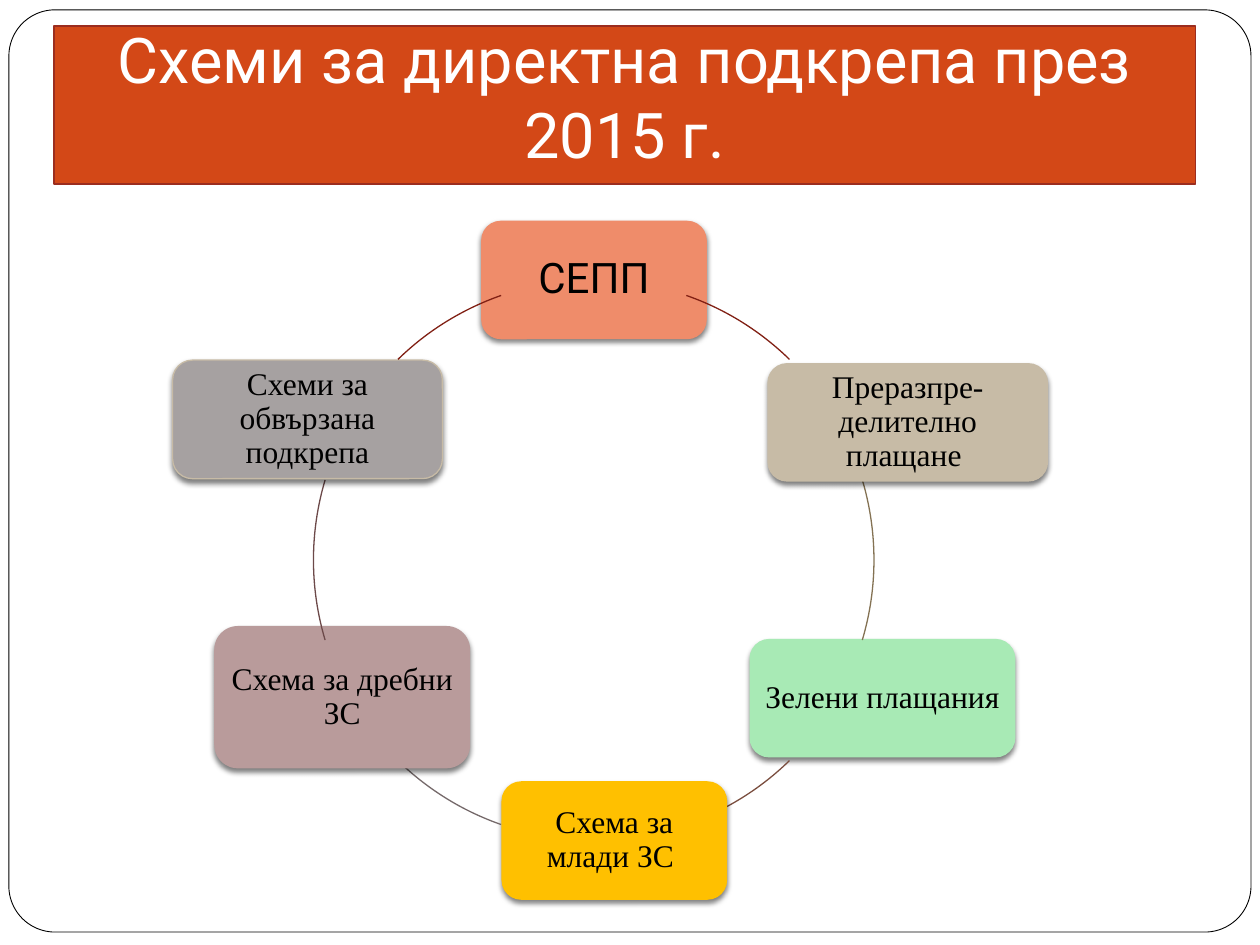
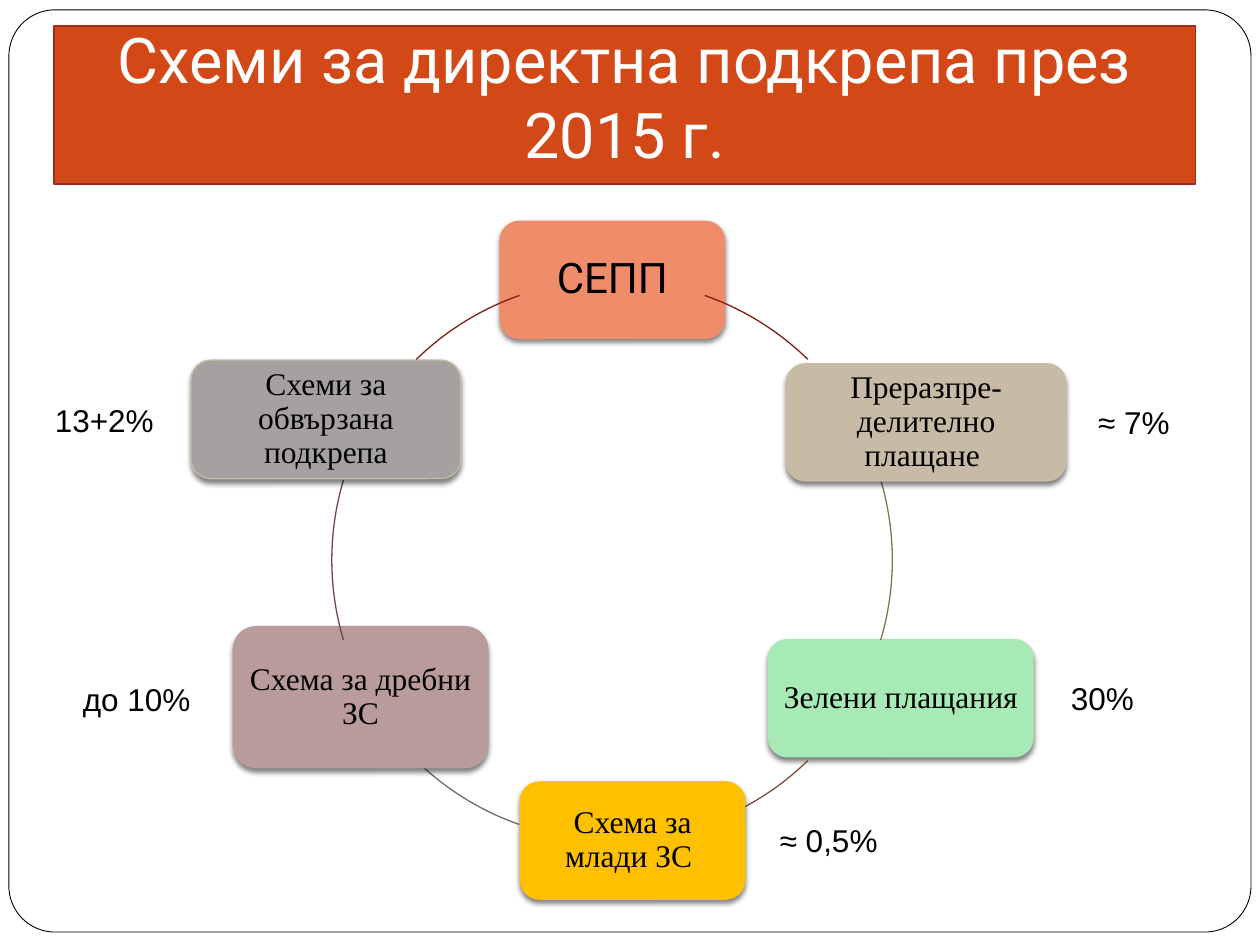
from dataclasses import dataclass
from typing import Any

from lxml import etree
from pptx import Presentation
from pptx import util as u
from pptx.dml.color import RGBColor
from pptx.enum import shapes, text
from pptx.oxml.ns import qn

BLACK = "000000"
WHITE = "FFFFFF"
BANNER_FILL = "D34817"
BANNER_LINE = "9B2D1F"
TITLE_FONT = "Roboto"
BODY_FONT = "Times New Roman"
LABEL_FONT = "Arial"
TITLE = "Схеми за директна подкрепа през 2015 г."

RING_LEFT, RING_TOP, RING_SIZE = 6.32, 5.64, 11.3
WHEEL_SHIFT = 0.37
BOX_HEIGHT = 2.39
LABEL_WIDTH, LABEL_HEIGHT = 2.64, 1.02


@dataclass(frozen=True)
class Area:
    """A rectangle in centimetres."""
    left: float
    top: float
    width: float
    height: float = BOX_HEIGHT

    def lengths(self) -> list[u.Length]:
        return [u.Cm(side) for side in (self.left, self.top, self.width, self.height)]


@dataclass(frozen=True)
class Scheme:
    """A box of the wheel and the ring arc drawn after it, in degrees clockwise."""
    name: str
    area: Area
    fill: str
    arc_start: float
    arc_end: float
    arc_color: str
    border: str | None = None
    font: str = BODY_FONT
    size: int = 18


@dataclass(frozen=True)
class ShareLabel:
    share: str
    left: float
    top: float
    width: float = LABEL_WIDTH
    align: Any = text.PP_ALIGN.LEFT


FRAME = Area(0.18, 0.2, 25.04, 18.59)
BANNER = Area(1.09, 0.53, 23.01, 3.18)
RING = Area(RING_LEFT, RING_TOP, RING_SIZE, RING_SIZE)

SCHEMES = [
    Scheme("СЕПП", Area(9.7, 4.45, 4.55), "EF8C6A", 289.3, 314.3, "812014",
           font=TITLE_FONT, size=24),
    Scheme("Зелени плащания ", Area(15.11, 12.88, 5.36), "A8EAB5", 343.4, 16.6, "847253"),
    Scheme("Преразпре-делително плащане ", Area(15.47, 7.32, 5.66), "C7BBA6",
           45.7, 70.7, "7A4D3E"),
    Scheme("Схема за млади ЗС ", Area(10.11, 15.75, 4.55), "FFC000", 109.3, 134.3, "75696A"),
    Scheme("Схема за дребни ЗС", Area(4.32, 12.62, 5.16, 2.87), "B99B9B",
           163.4, 196.6, "6C4949"),
    Scheme("Схеми за обвързана подкрепа", Area(3.48, 7.26, 5.44), "A6A1A1",
           225.7, 250.7, "812014", border="C7BBA6"),
]

SHARES = [
    ShareLabel("≈ 7%", 21.89, 8.0),
    ShareLabel("30%", 21.34, 13.56),
    ShareLabel("≈ 0,5%", 15.47, 16.43),
    ShareLabel("до 10%", 0.79, 13.59, 3.3, text.PP_ALIGN.RIGHT),
    ShareLabel("13+2%", 0.71, 7.95, align=text.PP_ALIGN.RIGHT),
]


def color(hex_value: str) -> RGBColor:
    return RGBColor.from_string(hex_value)


def set_all(target: Any, values: dict[str, Any]) -> None:
    for name, value in values.items():
        setattr(target, name, value)


def add_figure(parent: Any, kind: Any, area: Area, fill: str | None,
               line: str | None = None, line_width: float = 0.75) -> Any:
    shape = parent.shapes.add_shape(kind, *area.lengths())
    shape.shadow.inherit = False
    if fill:
        shape.fill.solid()
        shape.fill.fore_color.rgb = color(fill)
    else:
        shape.fill.background()
    if line:
        shape.line.color.rgb = color(line)
        shape.line.width = u.Pt(line_width)
    else:
        shape.line.fill.background()
    return shape


def write(shape: Any, words: str, font: str, size: int, ink: str = BLACK,
          align: Any = text.PP_ALIGN.CENTER, spacing: float = 1.0,
          **frame_values: Any) -> None:
    """Fill a shape with one paragraph; frame_values go to its text frame."""
    frame = shape.text_frame
    set_all(frame, {"word_wrap": True, **frame_values})
    paragraph = frame.paragraphs[0]
    set_all(paragraph, {"alignment": align, "line_spacing": spacing})
    run = paragraph.add_run()
    run.text = words
    set_all(run.font, {"name": font, "size": u.Pt(size)})
    run.font.color.rgb = color(ink)


def cast_shadow(shape: Any) -> None:
    """Add a soft half-transparent shadow straight below the shape."""
    effects = shape._element.spPr.find(qn("a:effectLst"))
    shadow = etree.SubElement(effects, qn("a:outerShdw"), blurRad=str(u.Pt(3)),
                              dist=str(u.Pt(2)), dir="5400000", rotWithShape="0")
    ink = etree.SubElement(shadow, qn("a:srgbClr"), val=BLACK)
    etree.SubElement(ink, qn("a:alpha"), val="50000")


def add_scheme(wheel: Any, scheme: Scheme) -> None:
    box = add_figure(wheel, shapes.MSO_SHAPE.ROUNDED_RECTANGLE, scheme.area,
                     scheme.fill, scheme.border)
    cast_shadow(box)
    margins = {f"margin_{side}": u.Cm(0.13) for side in ("left", "top", "right", "bottom")}
    write(box, scheme.name, scheme.font, scheme.size, spacing=0.9,
          vertical_anchor=text.MSO_ANCHOR.MIDDLE, **margins)
    arc = add_figure(wheel, shapes.MSO_SHAPE.ARC, RING, None, scheme.arc_color)
    for index, degrees in enumerate((scheme.arc_start, scheme.arc_end)):
        # Angles are stored in 1/60000 degree, adjustments in 1/100000.
        arc.adjustments[index] = degrees * 0.6


def add_wheel(slide: Any, shift: float) -> None:
    wheel = slide.shapes.add_group_shape()
    for scheme in SCHEMES:
        add_scheme(wheel, scheme)
    wheel.left += u.Cm(shift)


def add_banner(slide: Any) -> None:
    banner = add_figure(slide, shapes.MSO_SHAPE.RECTANGLE, BANNER,
                        BANNER_FILL, BANNER_LINE, 1)
    write(banner, TITLE, TITLE_FONT, 36, WHITE, vertical_anchor=text.MSO_ANCHOR.BOTTOM,
          margin_left=u.Cm(0.25), margin_right=u.Cm(0.25),
          margin_top=u.Cm(0.13), margin_bottom=u.Cm(0.25))


def add_share(slide: Any, label: ShareLabel) -> None:
    area = Area(label.left, label.top, label.width, LABEL_HEIGHT)
    box = slide.shapes.add_textbox(*area.lengths())
    write(box, label.share, LABEL_FONT, 18, align=label.align,
          auto_size=text.MSO_AUTO_SIZE.SHAPE_TO_FIT_TEXT)


def add_wheel_slide(presentation: Any, shift: float, shares: list[ShareLabel]) -> None:
    slide = presentation.slides.add_slide(presentation.slide_layouts[6])
    frame = add_figure(slide, shapes.MSO_SHAPE.ROUNDED_RECTANGLE, FRAME, WHITE, BLACK, 0.5)
    frame.adjustments[0] = 0.05
    add_wheel(slide, shift)
    add_banner(slide)
    for label in shares:
        add_share(slide, label)


def main() -> None:
    presentation = Presentation()
    set_all(presentation, {"slide_width": u.Cm(25.4), "slide_height": u.Cm(19.05)})
    add_wheel_slide(presentation, 0, [])
    add_wheel_slide(presentation, WHEEL_SHIFT, SHARES)
    presentation.save("out.pptx")


if __name__ == "__main__":
    main()
